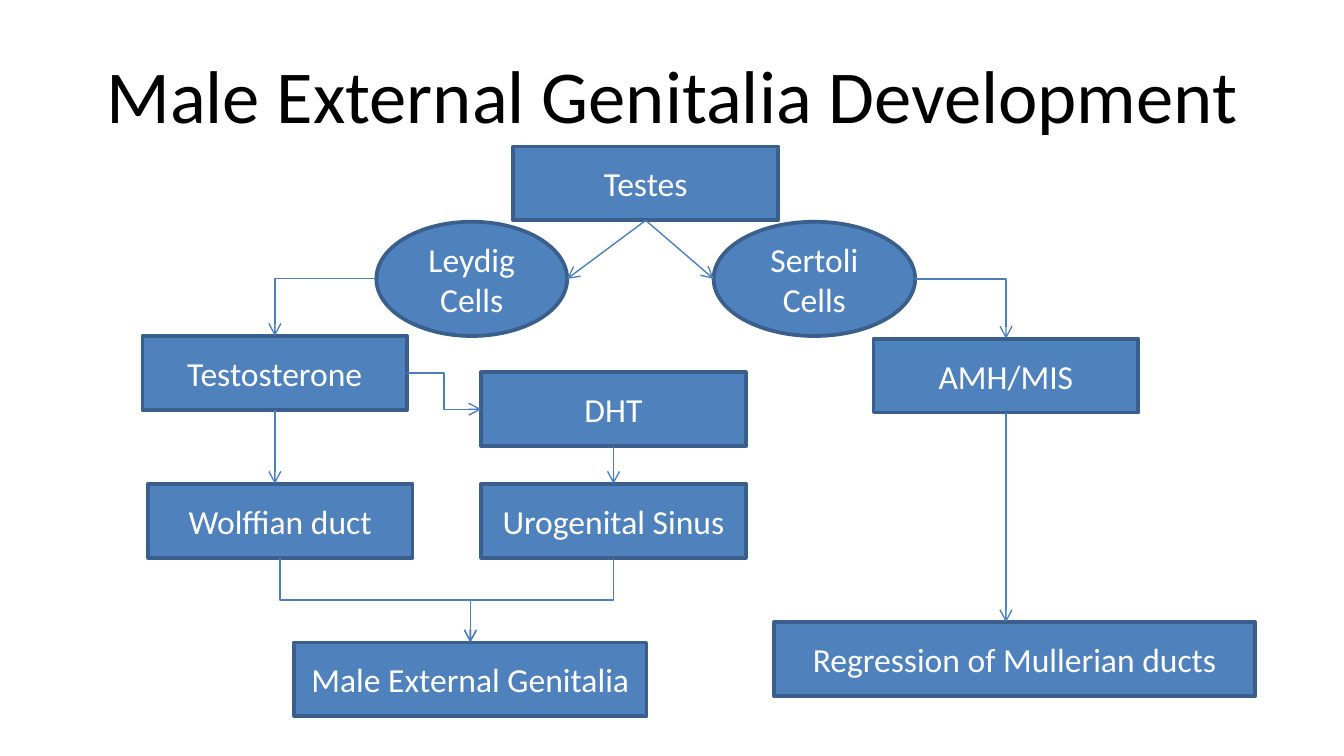
from lxml import etree
from pptx import Presentation
from pptx.dml.color import RGBColor
from pptx.enum.shapes import MSO_CONNECTOR as LINK, MSO_SHAPE as SHAPE
from pptx.enum.text import MSO_ANCHOR as ANCHOR, PP_ALIGN as ALIGN
from pptx.oxml.ns import qn
from pptx.util import Emu, Inches, Pt

BLACK = RGBColor(0x00, 0x00, 0x00)
WHITE = RGBColor(0xFF, 0xFF, 0xFF)
BLUE = RGBColor(0x4F, 0x81, 0xBD)
BORDER = RGBColor(0x3A, 0x5F, 0x8C)
ARROW = RGBColor(0x4B, 0x7E, 0xBC)

TOP, LEFT, BOTTOM, RIGHT = range(4)
BOX_W, BOX_H = 1.97, 0.55

# name: (label, preset, left, top, width, height), relative to the flowchart
STEPS = {
    "testes": ("Testes", SHAPE.RECTANGLE, 2.82, 0.09, BOX_W, BOX_H),
    "leydig": ("Leydig Cells", SHAPE.OVAL, 1.8, 0.65, 1.42, 0.85),
    "sertoli": ("Sertoli\nCells", SHAPE.OVAL, 4.31, 0.65, 1.5, 0.85),
    "testosterone": ("Testosterone", SHAPE.RECTANGLE, 0.06, 1.5, BOX_W, BOX_H),
    "wolffian": ("Wolffian duct", SHAPE.RECTANGLE, 0.1, 2.6, BOX_W, BOX_H),
    "genitalia": ("Male External Genitalia", SHAPE.RECTANGLE, 1.19, 3.78, 2.62, BOX_H),
    "dht": ("DHT", SHAPE.RECTANGLE, 2.58, 1.77, BOX_W, BOX_H),
    "sinus": ("Urogenital Sinus", SHAPE.RECTANGLE, 2.58, 2.6, BOX_W, BOX_H),
    "amh": ("AMH/MIS", SHAPE.RECTANGLE, 5.5, 1.52, BOX_W, BOX_H),
    "regression": ("Regression of Mullerian ducts", SHAPE.RECTANGLE, 4.76, 3.63, 3.58, BOX_H),
}
# start, side, end, side, preset, rotation in degrees, flip attribute
ELBOWS = [
    ("leydig", LEFT, "testosterone", TOP, "bentConnector2", 180, "flipV"),
    ("testosterone", RIGHT, "dht", LEFT, "bentConnector3", 0, None),
    ("wolffian", BOTTOM, "genitalia", TOP, "bentConnector3", 270, "flipH"),
    ("sinus", BOTTOM, "genitalia", TOP, "bentConnector3", 90, None),
    ("sertoli", RIGHT, "amh", TOP, "bentConnector2", 0, None),
]


def apply(target, values):
    for name, value in values.items():
        setattr(target, name, value)


def write(shape, text, size, color):
    frame = shape.text_frame
    frame.text = text
    apply(frame, {"word_wrap": True, "vertical_anchor": ANCHOR.MIDDLE})
    for paragraph in frame.paragraphs:
        paragraph.alignment = ALIGN.CENTER
        apply(paragraph.font, {"name": "Calibri", "size": Pt(size)})
        paragraph.font.color.rgb = color


def side_middle(step, side):
    x, y, w, h = step.left, step.top, step.width, step.height
    return [(x + w // 2, y), (x, y + h // 2),
            (x + w // 2, y + h), (x + w, y + h // 2)][side]


def add_arrow(slide, kind, start, end):
    arrow = slide.shapes.add_connector(kind, *map(Emu, (*start, *end)))
    arrow.line.color.rgb = ARROW
    arrow.line.width = Pt(0.75)
    properties = arrow.element.spPr
    etree.SubElement(properties.find(qn("a:ln")), qn("a:tailEnd"), type="arrow")
    etree.SubElement(properties, qn("a:effectLst"))
    return arrow


def add_elbow(slide, start, end, preset, rotation, flip):
    """Give the bend by preset, rotation and flip; a quarter turn swaps the frame's sides."""
    (x1, y1), (x2, y2) = start, end
    w, h = abs(x2 - x1), abs(y2 - y1)
    if rotation in (90, 270):
        w, h = h, w
    left, top = (x1 + x2 - w) // 2, (y1 + y2 - h) // 2
    elbow = add_arrow(slide, LINK.ELBOW, (left, top), (left + w, top + h))
    elbow.element.spPr.find(qn("a:prstGeom")).set("prst", preset)
    frame = elbow.element.spPr.find(qn("a:xfrm"))
    if rotation:
        frame.set("rot", str(rotation * 60000))
    if flip:
        frame.set(flip, "1")


def add_step(slide, origin, label, preset, left, top, width, height):
    step = slide.shapes.add_shape(preset, Inches(origin[0] + left), Inches(origin[1] + top),
                                  Inches(width), Inches(height))
    step.shadow.inherit = False
    step.fill.solid()
    step.fill.fore_color.rgb = BLUE
    step.line.color.rgb = BORDER
    step.line.width = Pt(2)
    write(step, label, 18, WHITE)
    return step


def add_title(slide, box):
    title = slide.shapes.add_textbox(*map(Inches, box))
    write(title, "Male External Genitalia Development", 40, BLACK)


def add_flowchart(slide, origin):
    steps = {name: add_step(slide, origin, *step) for name, step in STEPS.items()}

    for cells, side in (("leydig", RIGHT), ("sertoli", LEFT)):
        arrow = add_arrow(slide, LINK.STRAIGHT, side_middle(steps["testes"], BOTTOM),
                          side_middle(steps[cells], side))
        arrow.begin_connect(steps["testes"], BOTTOM)

    for upper, lower in (("testosterone", "wolffian"), ("dht", "sinus"), ("amh", "regression")):
        start = side_middle(steps[upper], BOTTOM)
        target = side_middle(steps[lower], TOP)
        arrow = add_arrow(slide, LINK.STRAIGHT, start, (start[0], target[1]))
        arrow.begin_connect(steps[upper], BOTTOM)
        if start[0] == target[0]:
            arrow.end_connect(steps[lower], TOP)

    for first, first_side, last, last_side, *bend in ELBOWS:
        add_elbow(slide, side_middle(steps[first], first_side),
                  side_middle(steps[last], last_side), *bend)


def main():
    deck = Presentation()
    deck.slide_width = Inches(10)
    deck.slide_height = deck.slide_width * 9 // 16
    slide = deck.slides.add_slide(deck.slide_layouts[6])
    add_title(slide, (0.5, 0.23, 9, 0.94))
    add_flowchart(slide, (1, 1))
    deck.save("out.pptx")


if __name__ == "__main__":
    main()
